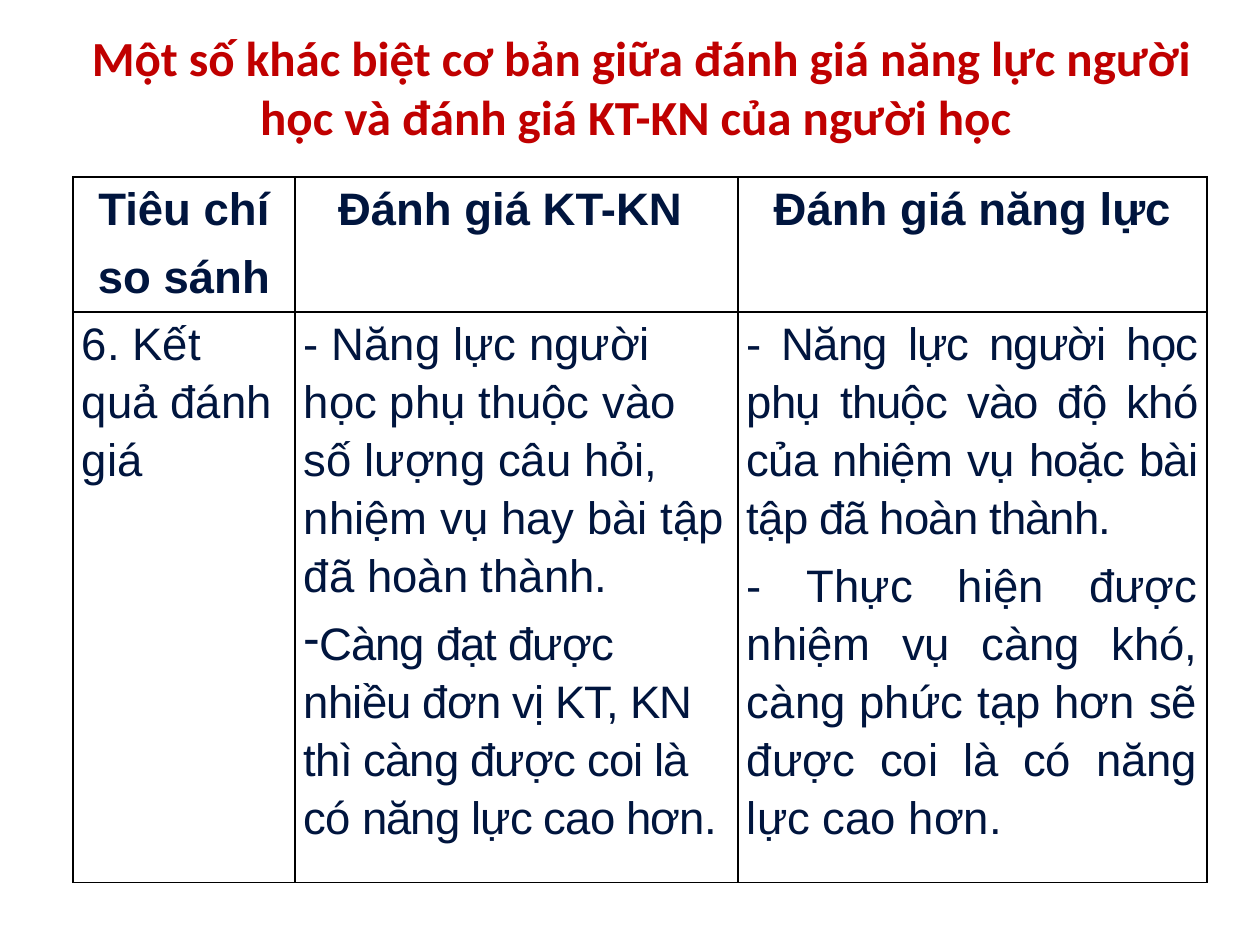
from dataclasses import dataclass

from lxml.etree import SubElement as Sub
from pptx import Presentation
from pptx.dml.color import RGBColor
from pptx.enum.text import MSO_AUTO_SIZE as Auto, PP_ALIGN as Align
from pptx.oxml.ns import qn
from pptx.util import Emu, Pt

SCALE = 914400 / 126
RED = RGBColor(0xC0, 0x00, 0x00)
NAVY = RGBColor(0x00, 0x15, 0x3E)
BLACK = RGBColor(0x00, 0x00, 0x00)

TITLE = "Một số khác biệt cơ bản giữa đánh giá năng lực người học và đánh giá KT-KN của người học "
COLS = [222, 443, 469]
ROWS = [135, 570]


@dataclass
class Para:
    text: str
    align: Align = Align.LEFT
    bold: bool = False
    track: int = 0  # letter spacing, hundredths of a point
    dash: bool = False


def head(text: str) -> Para:
    return Para(text, Align.CENTER, bold=True)


CELLS = [
    [
        [head("Tiêu chí"), head("so sánh")],
        [head("Đánh giá KT-KN ")],
        [head("Đánh giá năng lực")],
    ],
    [
        [Para("6. Kết quả đánh giá")],
        [
            Para("- Năng lực người học phụ thuộc vào số lượng câu hỏi, "
                 "nhiệm vụ hay bài tập đã hoàn thành."),
            Para("Càng đạt được nhiều đơn vị KT, KN thì càng được coi là "
                 "có năng lực cao hơn.", track=-50, dash=True),
        ],
        [
            Para("- Năng lực người học phụ thuộc vào độ khó của nhiệm vụ "
                 "hoặc bài tập đã hoàn thành.", Align.JUSTIFY, track=-50),
            Para("- Thực hiện được nhiệm vụ càng khó, càng phức tạp hơn sẽ "
                 "được coi là có năng lực cao hơn.", Align.JUSTIFY),
        ],
    ],
]


def px(n: int) -> Emu:
    return Emu(round(n * SCALE))


def style(obj, form: dict) -> None:
    """Set each attribute named in form."""
    for name, value in form.items():
        setattr(obj, name, value)


def write(par, text: str, font: dict, color: RGBColor):
    run = par.add_run()
    run.text = text
    style(run.font, font)
    run.font.color.rgb = color
    return run


def add_title(slide) -> None:
    box = slide.shapes.add_textbox(px(53), px(21), px(1176), px(131))
    frame = box.text_frame
    style(frame, {"word_wrap": True, "auto_size": Auto.SHAPE_TO_FIT_TEXT})
    par = frame.paragraphs[0]
    par.alignment = Align.CENTER
    write(par, TITLE, {"name": "Calibri", "size": Pt(28), "bold": True}, RED)


def add_para(par, item: Para) -> None:
    style(par, {"alignment": item.align, "line_spacing": 1.14,
                "space_before": Pt(6)})
    font = {"name": "Arial", "size": Pt(26), "bold": item.bold}
    run = write(par, item.text, font, NAVY)
    if item.track:
        run.font._element.set("spc", str(item.track))
    if item.dash:
        props = par._p.get_or_add_pPr()
        props.set("marL", "0")
        props.set("indent", "0")
        Sub(props, qn("a:buChar"), char="-")


def add_edges(cell) -> None:
    props = cell._tc.get_or_add_tcPr()
    for side in "LRTB":
        line = Sub(props, qn(f"a:ln{side}"), w=str(Pt(1)))
        fill = Sub(line, qn("a:solidFill"))
        Sub(fill, qn("a:srgbClr"), val=str(BLACK))


def fill_cell(cell, items: list[Para]) -> None:
    style(cell, {"margin_left": px(9), "margin_right": px(9),
                 "margin_top": 0, "margin_bottom": 0})
    add_edges(cell)
    cell.fill.background()
    frame = cell.text_frame
    for i, item in enumerate(items):
        add_para(frame.add_paragraph() if i else frame.paragraphs[0], item)


def add_grid(slide) -> None:
    shape = slide.shapes.add_table(len(ROWS), len(COLS), px(73), px(177),
                                   px(sum(COLS)), px(sum(ROWS)))
    table = shape.table
    style(table, {"first_row": False, "horz_banding": False})
    for col, wide in zip(table.columns, COLS):
        col.width = px(wide)
    for row, high, cells in zip(table.rows, ROWS, CELLS):
        row.height = px(high)
        for cell, items in zip(row.cells, cells):
            fill_cell(cell, items)


def main() -> None:
    deck = Presentation()
    style(deck, {"slide_width": px(1260), "slide_height": px(945)})
    slide = deck.slides.add_slide(deck.slide_layouts[6])
    add_title(slide)
    add_grid(slide)
    deck.save("out.pptx")


if __name__ == "__main__":
    main()
